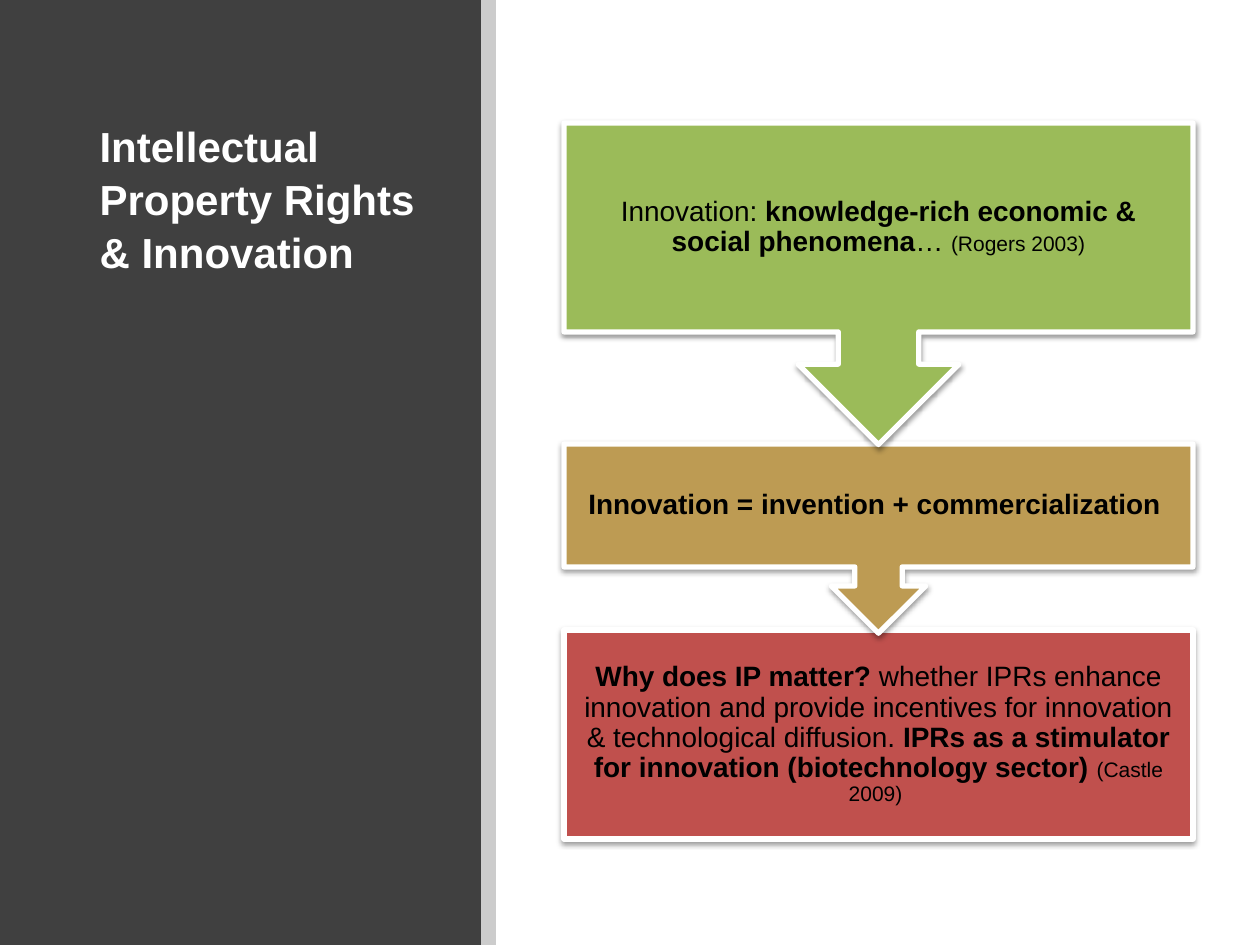
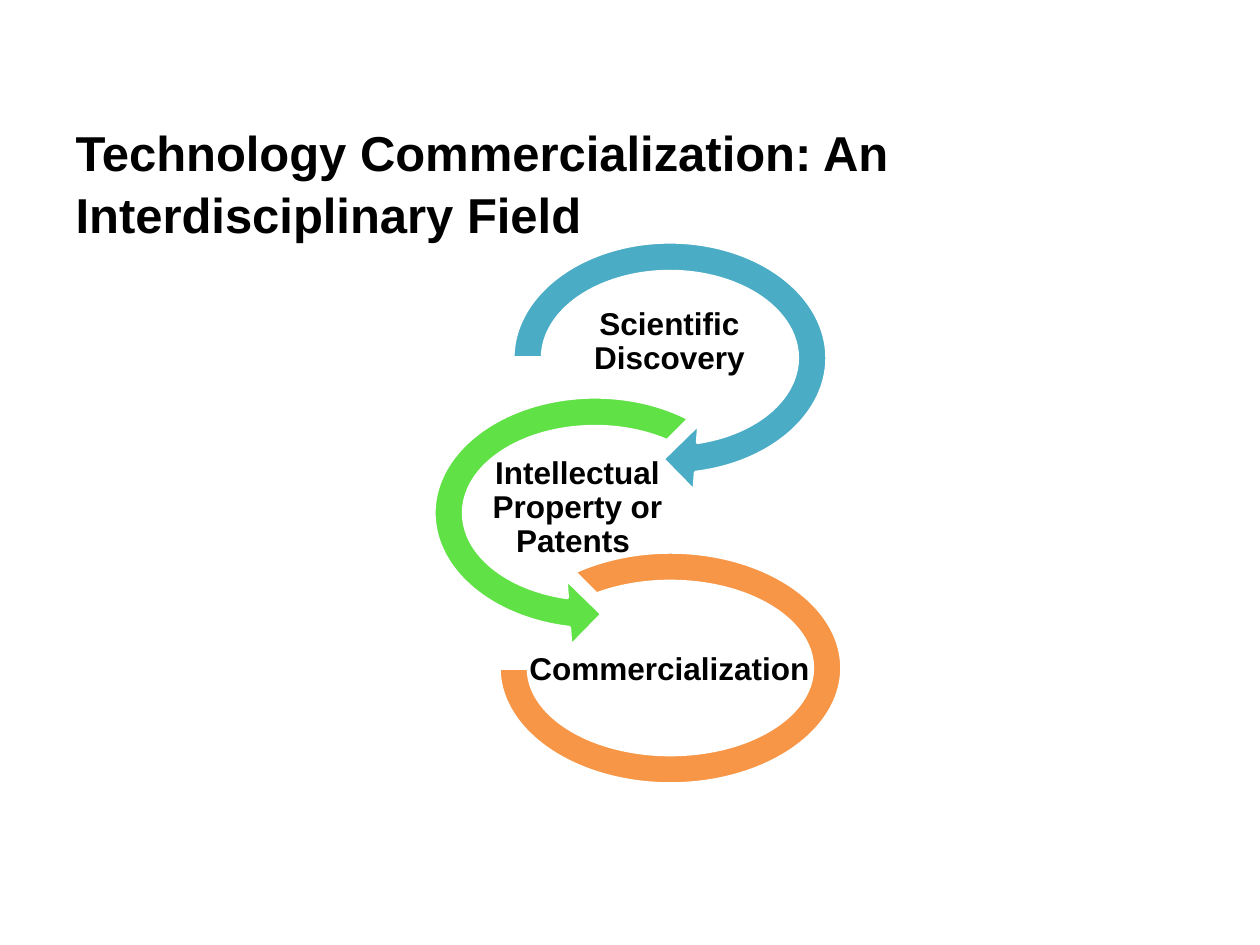
from lxml.etree import SubElement
from pptx import Presentation
from pptx.dml.color import RGBColor
from pptx.enum.shapes import MSO_SHAPE
from pptx.enum.text import MSO_ANCHOR, MSO_AUTO_SIZE, PP_ALIGN
from pptx.oxml.ns import qn
from pptx.util import Emu, Pt

# Content
COLORS = {
    "black": "000000", "white": "FFFFFF", "panel": "404040",
    "green": "9BBB59", "sand": "BD9B53", "red": "C0504D",
    "blue": "4BACC6", "lime": "60E146", "orange": "F79646",
}
FONT = "Arial"

RIGHTS_TITLE = "Intellectual Property Rights & Innovation"
# Step: colour, top, box height, has arrow, runs of (text, size, bold)
STEPS = [
    ("green", 123, 209, True, [
        ("Innovation: ", 16, False),
        ("knowledge-rich economic & social phenomena", 16, True),
        ("… ", 16, False),
        ("(Rogers 2003)", 12, False)]),
    ("sand", 444, 123, True, [
        ("Innovation = invention + commercialization ", 16, True)]),
    ("red", 630, 209, False, [
        ("Why does IP matter? ", 16, True),
        ("whether IPRs enhance innovation and provide incentives for "
         "innovation & technological diffusion. ", 16, False),
        ("IPRs as a stimulator for innovation (biotechnology sector) ", 16, True),
        ("(Castle 2009) ", 12, False)]),
]
STEP_LEFT, STEP_WIDTH = 564, 629
BOX_SHARE = 0.65  # part of a callout's height taken by its box

FIELD_TITLE = "Technology Commercialization: An Interdisciplinary Field"
# Field: text, text box, preset, colour, shape box, adjustments
FIELDS = [
    ("Scientific Discovery", (573, 305, 193, 74), MSO_SHAPE.CIRCULAR_ARROW,
     "blue", (494, 223, 352, 270), (0.11, 11.42, 45, 108, 0.125)),
    ("Intellectual Property or Patents ", (490, 471, 175, 74),
     MSO_SHAPE.LEFT_CIRCULAR_ARROW,
     "lime", (415, 378, 360, 270), (0.11, 11.42, 63, 189, 0.125)),
    ("Commercialization ", (525, 633, 289, 74), MSO_SHAPE.BLOCK_ARC,
     "orange", (499, 552, 343, 232), (135, 108, 0.127)),
]


# Helpers
def px(v):
    return Emu(round(v * 914400 / 126))


def rgb(name):
    return RGBColor.from_string(COLORS[name])


def add_filled(s, preset, box, color, line=None):
    sp = s.shapes.add_shape(preset, *map(px, box))
    sp.shadow.inherit = False
    sp.fill.solid()
    sp.fill.fore_color.rgb = rgb(color)
    if line:
        sp.line.color.rgb = rgb("white")
        sp.line.width = Pt(line)
    else:
        sp.line.fill.background()
    return sp


def set_alpha(color_el, percent):
    SubElement(color_el, qn("a:alpha"), val=str(percent * 1000))


def add_shadow(sp):
    effects = sp._element.spPr.find(qn("a:effectLst"))
    shadow = SubElement(effects, qn("a:outerShdw"), blurRad=str(Pt(3.1)),
                        dist=str(Pt(1.6)), dir="5400000", rotWithShape="0")
    set_alpha(SubElement(shadow, qn("a:srgbClr"), val=COLORS["black"]), 38)


def set_font(font, size=None, bold=None, color="black"):
    font.name = FONT
    font.color.rgb = rgb(color)
    if size:
        font.size = Pt(size)
    font.bold = bold


def add_label(s, box, runs, inset):
    tf = s.shapes.add_textbox(*map(px, box)).text_frame
    tf.word_wrap = True
    tf.vertical_anchor = MSO_ANCHOR.MIDDLE
    tf.margin_left = tf.margin_right = tf.margin_top = tf.margin_bottom = px(inset)
    p = tf.paragraphs[0]
    p.alignment = PP_ALIGN.CENTER
    p.line_spacing = 0.9
    if len(runs) == 1:
        set_font(p.font, *runs[0][1:])
    else:
        set_font(p.font)
    for text, size, bold in runs:
        r = p.add_run()
        r.text = text
        if len(runs) > 1:
            r.font.size, r.font.bold = Pt(size), bold


def add_titled_slide(prs, text, box, size, color):
    s = prs.slides.add_slide(prs.slide_layouts[5])
    title = s.shapes.title
    title.left, title.top, title.width, title.height = map(px, box)
    tf = title.text_frame
    tf.text = text
    tf.word_wrap = True
    tf.auto_size = MSO_AUTO_SIZE.NONE
    tf.vertical_anchor = MSO_ANCHOR.TOP
    p = tf.paragraphs[0]
    p.alignment = PP_ALIGN.LEFT
    p.line_spacing = 1.05
    set_font(p.font, size, True, color)
    return s


# Slides
def build_rights(prs):
    s = add_titled_slide(prs, RIGHTS_TITLE, (87, 112, 345, 745), 24, "white")

    # Dark side panel behind the title, with a translucent edge
    panel = add_filled(s, MSO_SHAPE.RECTANGLE, (0, 0, 481, 945), "panel")
    s.shapes._spTree.insert(2, panel._element)
    edge = add_filled(s, MSO_SHAPE.RECTANGLE, (481, 0, 15, 945), "black")
    set_alpha(edge._element.spPr.find(qn("a:solidFill"))[0], 20)

    # Steps from the bottom up, so each arrow tip lies over the next box
    for color, top, height, has_arrow, runs in reversed(STEPS):
        preset = MSO_SHAPE.UP_ARROW_CALLOUT if has_arrow else MSO_SHAPE.RECTANGLE
        full = height / BOX_SHARE if has_arrow else height
        sp = add_filled(s, preset, (STEP_LEFT, top, STEP_WIDTH, full), color, 3)
        if has_arrow:
            sp.rotation = 180
        add_shadow(sp)
        add_label(s, (STEP_LEFT, top, STEP_WIDTH, height), runs, 15)


def build_fields(prs):
    s = add_titled_slide(prs, FIELD_TITLE, (63, 113, 1134, 158), 28, "black")
    for text, text_box, preset, color, box, adjustments in FIELDS:
        sp = add_filled(s, preset, box, color, 2)
        for i, value in enumerate(adjustments):
            sp.adjustments[i] = value
        add_label(s, text_box, [(text, 18, True)], 1)


def main():
    prs = Presentation()
    prs.slide_width, prs.slide_height = px(1260), px(945)
    build_rights(prs)
    build_fields(prs)
    prs.save("out.pptx")


if __name__ == "__main__":
    main()
